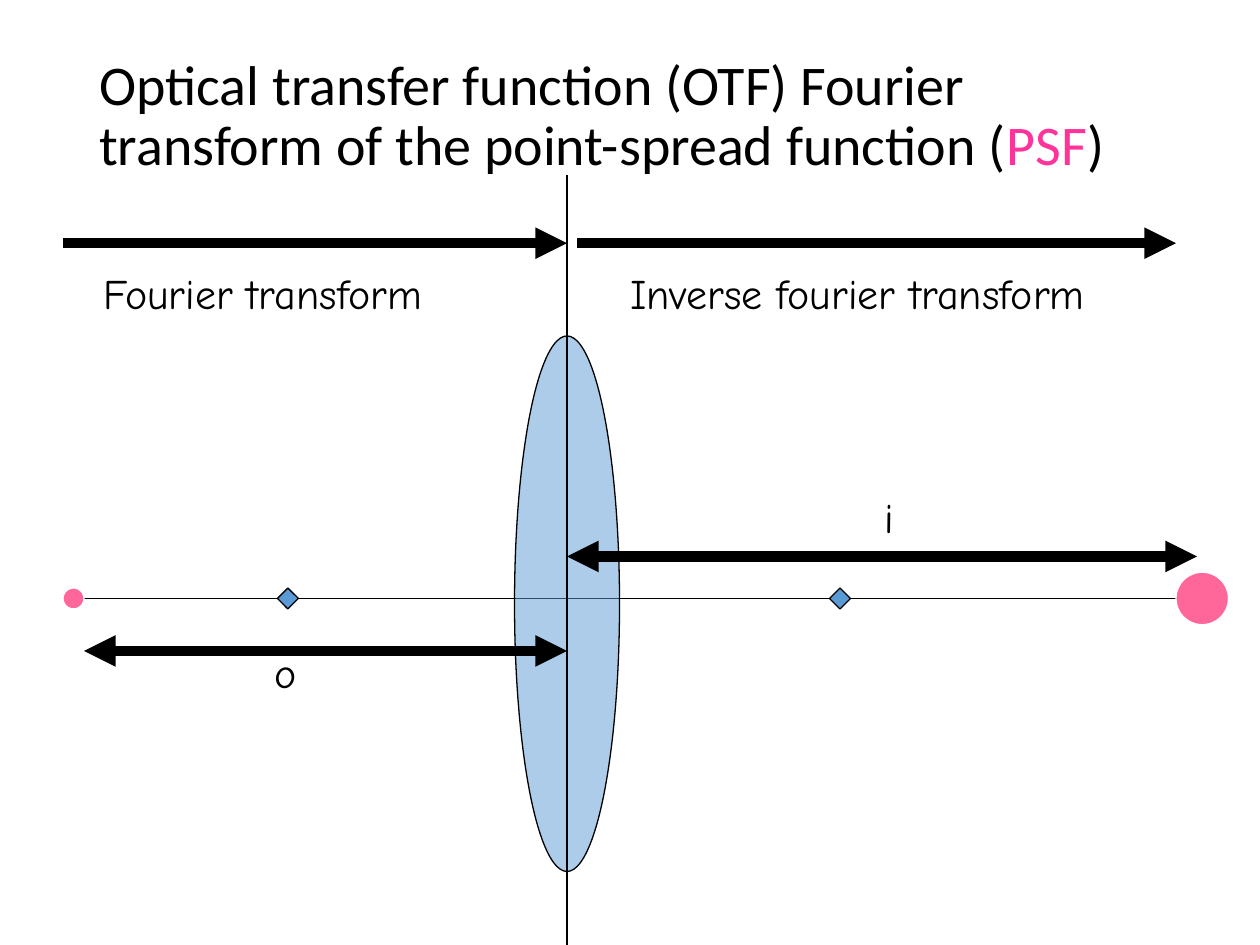
from lxml import etree
from pptx import Presentation
from pptx.dml.color import RGBColor
from pptx.enum.shapes import MSO_CONNECTOR, MSO_SHAPE
from pptx.enum.text import MSO_ANCHOR, MSO_AUTO_SIZE, PP_ALIGN
from pptx.oxml.ns import qn
from pptx.util import Pt

STRAIGHT = MSO_CONNECTOR.STRAIGHT
OVAL, DIAMOND = MSO_SHAPE.OVAL, MSO_SHAPE.DIAMOND
TOP, MIDDLE = MSO_ANCHOR.TOP, MSO_ANCHOR.MIDDLE
LEFT, CENTER = PP_ALIGN.LEFT, PP_ALIGN.CENTER
FIT_SHAPE, NO_FIT = MSO_AUTO_SIZE.SHAPE_TO_FIT_TEXT, MSO_AUTO_SIZE.NONE

COLORS = {"ink": "000000", "glass": "5B9BD5", "spot": "FF6699",
          "accent": "FF3399", "paper": "FFFFFF"}

TITLE = [
    ("Optical transfer function (OTF) Fourier transform of the point-spread function (", "ink"),
    ("PSF", "accent"),
    (")", "ink"),
]
LENS_X, AXIS_Y, TRANSFORM_Y = 324, 342, 139

OPTICAL_AXIS = ((36, AXIS_Y), (702, AXIS_Y))
LENS_PLANE = ((LENS_X, 100), (LENS_X, 540))
DISTANCES = [
    ((LENS_X, 318), (684, 318)),
    ((LENS_X, 372), (48, 372)),
]
TRANSFORMS = [
    ((36, TRANSFORM_Y), (LENS_X, TRANSFORM_Y)),
    ((330, TRANSFORM_Y), (672, TRANSFORM_Y)),
]
FOCAL_POINTS = [480, 164.5]
SPOTS = [(42, 12), (687, 30)]
LABELS = [
    ("o", (149.8, 365.8, 27.4, 41), LEFT, TOP),
    ("i", (498.2, 277.2, 21.6, 41), LEFT, TOP),
    ("Fourier transform", (41, 146.9, 218.2, 41), CENTER, MIDDLE),
    ("Inverse fourier transform", (334.8, 146.9, 310.3, 41), CENTER, MIDDLE),
]


def rgb(name):
    return RGBColor.from_string(COLORS[name])


def write(frame, runs, *, font, size, align=LEFT, anchor=TOP, wrap=False,
          fit=FIT_SHAPE, spacing=None):
    frame.word_wrap = wrap
    frame.auto_size = fit
    frame.vertical_anchor = anchor
    paragraph = frame.paragraphs[0]
    paragraph.alignment = align
    paragraph.line_spacing = spacing
    for text, color in runs:
        run = paragraph.add_run()
        run.text = text
        run.font.name = font
        run.font.size = Pt(size)
        run.font.color.rgb = rgb(color)


def add_line(slide, ends, width=0.75, heads=()):
    (x1, y1), (x2, y2) = ends
    connector = slide.shapes.add_connector(STRAIGHT, Pt(x1), Pt(y1), Pt(x2), Pt(y2))
    connector.line.color.rgb = rgb("ink")
    connector.line.width = Pt(width)
    outline = connector.line._get_or_add_ln()
    for head in heads:
        etree.SubElement(outline, qn(f"a:{head}"), type="triangle")
    etree.SubElement(connector._element.spPr, qn("a:effectLst"))


def add_centered(slide, kind, x, y, width, height, fill, line, opacity=None):
    shape = slide.shapes.add_shape(
        kind, Pt(x - width / 2), Pt(y - height / 2), Pt(width), Pt(height))
    shape.shadow.inherit = False
    shape.fill.solid()
    shape.fill.fore_color.rgb = rgb(fill)
    shape.line.color.rgb = rgb(line)
    shape.line.width = Pt(0.75)
    if opacity:
        color = shape._element.spPr.find(qn("a:solidFill"))[0]
        etree.SubElement(color, qn("a:alpha"), val=str(opacity * 1000))


def main():
    deck = Presentation()
    deck.slide_width, deck.slide_height = Pt(720), Pt(540)
    slide = deck.slides.add_slide(deck.slide_layouts[5])

    title = slide.shapes.title
    title.left, title.top, title.width, title.height = map(Pt, (49.5, 28.75, 621, 104.4))
    write(title.text_frame, TITLE, font="Calibri", size=32, wrap=True,
          fit=NO_FIT, spacing=0.9)

    add_line(slide, OPTICAL_AXIS)
    add_centered(slide, OVAL, LENS_X, 345, 60, 306, "glass", "ink", opacity=50)
    for x in FOCAL_POINTS:
        add_centered(slide, DIAMOND, x, AXIS_Y, 12, 12, "glass", "ink")
    for ends in DISTANCES:
        add_line(slide, ends, width=6, heads=("headEnd", "tailEnd"))
    for x, size in SPOTS:
        add_centered(slide, OVAL, x, AXIS_Y, size, size, "spot", "paper")
    add_line(slide, LENS_PLANE)
    for ends in TRANSFORMS:
        add_line(slide, ends, width=6, heads=("tailEnd",))

    for text, box, align, anchor in LABELS:
        label = slide.shapes.add_textbox(*map(Pt, box))
        write(label.text_frame, [(text, "ink")], font="Comic Neue", size=24,
              align=align, anchor=anchor)

    deck.save("out.pptx")


if __name__ == "__main__":
    main()
